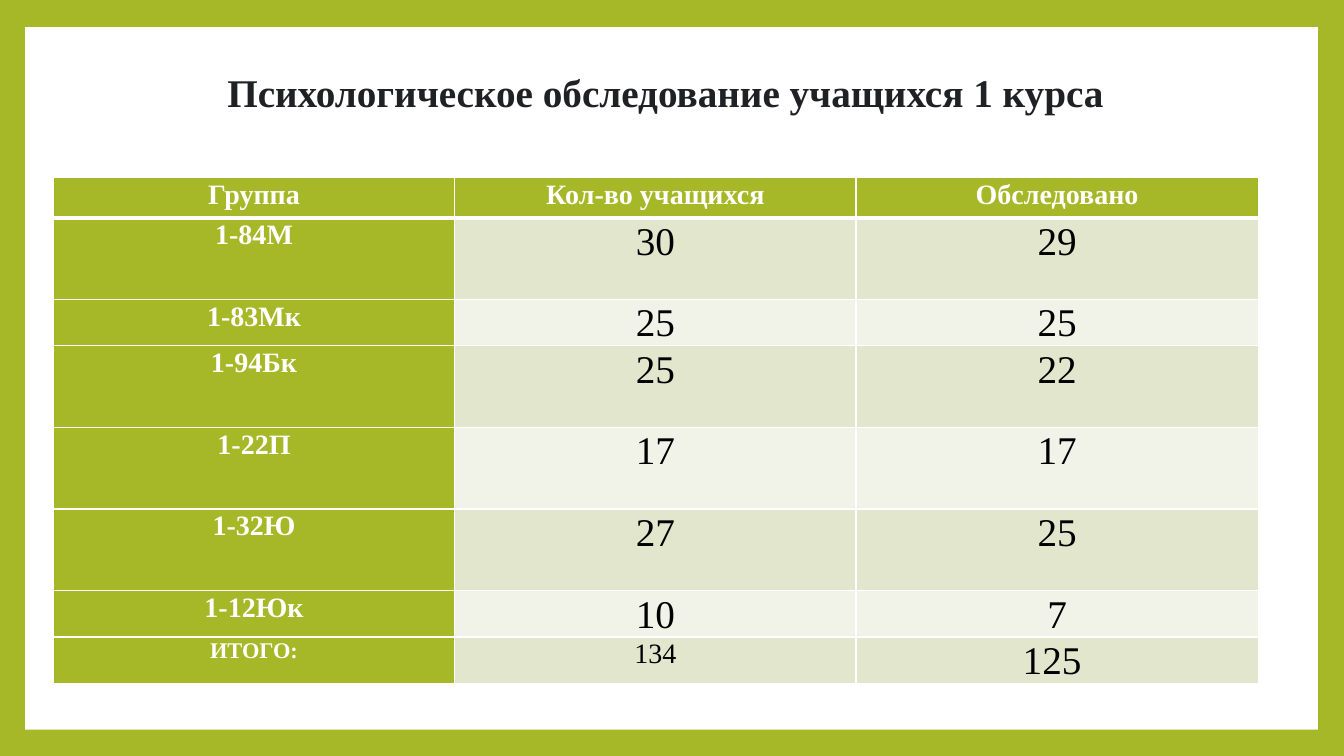
from lxml.etree import SubElement
from pptx import Presentation
from pptx.dml.color import RGBColor
from pptx.enum.shapes import MSO_SHAPE
from pptx.enum.text import MSO_ANCHOR, PP_ALIGN
from pptx.oxml.ns import qn
from pptx.util import Inches, Pt

GREEN, WHITE, BLACK, TITLE_COLOR = "A6B727", "FFFFFF", "000000", "202124"
BANDS = ["E1E6CD", "F1F3E8"]


def paint(fill, color):
    fill.solid()
    fill.fore_color.rgb = RGBColor.from_string(color)


def write(text_frame, text, size, color, bold=False, space_after=0):
    paragraph = text_frame.paragraphs[0]
    paragraph.alignment = PP_ALIGN.CENTER
    paragraph.line_spacing = 1.06
    paragraph.space_before = Pt(0)
    paragraph.space_after = Pt(space_after)
    run = paragraph.add_run()
    run.text = text
    run.font.name = "Times New Roman"
    run.font.size = Pt(size)
    run.font.bold = bold
    run.font.color.rgb = RGBColor.from_string(color)


presentation = Presentation()
presentation.slide_width = Inches(13.33)
presentation.slide_height = Inches(7.5)
slide = presentation.slides.add_slide(presentation.slide_layouts[5])
paint(slide.background.fill, GREEN)

# White panel, sent behind the title
panel = slide.shapes.add_shape(
    MSO_SHAPE.RECTANGLE, Inches(0.25), Inches(0.27), Inches(12.82), Inches(6.97))
panel.shadow.inherit = False
paint(panel.fill, WHITE)
panel.line.fill.background()
slide.shapes._spTree.insert(2, panel._element)

title = slide.shapes.title
title.left, title.top = Inches(2.11), Inches(0.6)
title.width, title.height = Inches(8.98), Inches(0.58)
title.text_frame.word_wrap = False
title.text_frame.vertical_anchor = MSO_ANCHOR.TOP
write(title.text_frame, "Психологическое обследование учащихся 1 курса",
      size=28, color=TITLE_COLOR, bold=True, space_after=8)

# Each row: height, then group, number of students, number examined
rows = [
    (0.4, "Группа", "Кол-во учащихся", "Обследовано"),
    (0.81, "1-84М", "30", "29"),
    (0.46, "1-83Мк", "25", "25"),
    (0.81, "1-94Бк", "25", "22"),
    (0.81, "1-22П", "17", "17"),
    (0.81, "1-32Ю", "27", "25"),
    (0.46, "1-12Юк", "10", "7"),
    (0.46, "ИТОГО:", "134", "125"),
]
total_row = len(rows) - 1
total_sizes = [16, 20, 28]
table_height = sum(row[0] for row in rows)
table = slide.shapes.add_table(
    len(rows), 3, Inches(0.53), Inches(1.76), Inches(11.95), Inches(table_height)).table
table.horz_banding = False
table.first_col = True
for column, width in zip(table.columns, [3.98, 3.98, 3.99]):
    column.width = Inches(width)

for row_index, (height, *texts) in enumerate(rows):
    table.rows[row_index].height = Inches(height)
    for column_index, text in enumerate(texts):
        cell = table.cell(row_index, column_index)
        cell.margin_left = cell.margin_right = Inches(0.07)
        cell.margin_top = cell.margin_bottom = 0
        is_heading = row_index == 0 or column_index == 0

        cell_properties = cell._tc.get_or_add_tcPr()
        for side in ["L", "R", "T", "B"]:
            below_header = (row_index, side) in [(0, "B"), (1, "T")]
            border = SubElement(cell_properties, qn(f"a:ln{side}"),
                                w=str(Pt(3 if below_header else 1)))
            border_fill = SubElement(border, qn("a:solidFill"))
            SubElement(border_fill, qn("a:srgbClr"), val=WHITE)
        paint(cell.fill, GREEN if is_heading else BANDS[(row_index - 1) % 2])

        size = 20 if is_heading else 28
        if row_index == total_row:
            size = total_sizes[column_index]
        write(cell.text_frame, text, size=size,
              color=WHITE if is_heading else BLACK, bold=is_heading)

# The examined total sits slightly left of centre
table.cell(total_row, 2).margin_right = Inches(0.17)

presentation.save("out.pptx")
